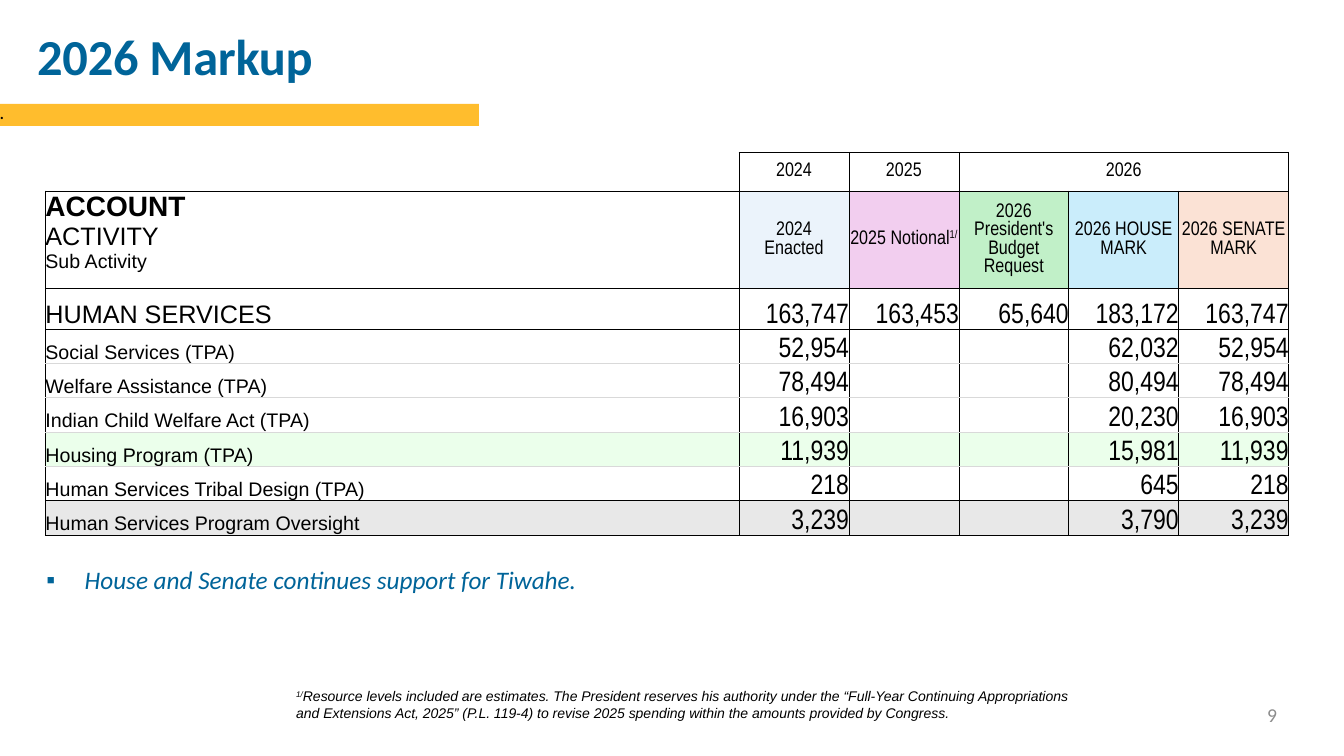
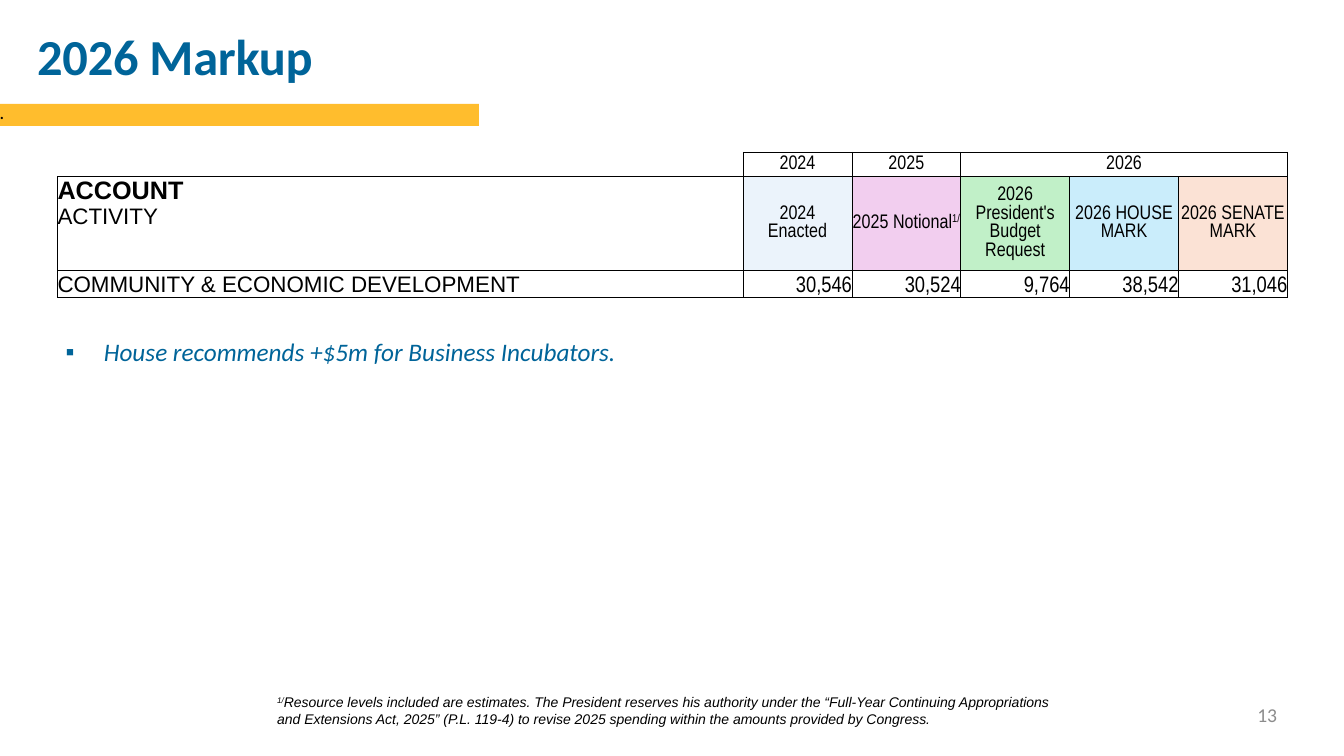
from lxml import etree
from pptx import Presentation
from pptx.dml.color import RGBColor
from pptx.enum.shapes import MSO_SHAPE
from pptx.enum.text import MSO_ANCHOR, MSO_AUTO_SIZE, PP_ALIGN
from pptx.oxml.ns import qn
from pptx.util import Inches, Pt

LEFT, CENTER, RIGHT = PP_ALIGN.LEFT, PP_ALIGN.CENTER, PP_ALIGN.RIGHT
TOP, MIDDLE, BOTTOM = MSO_ANCHOR.TOP, MSO_ANCHOR.MIDDLE, MSO_ANCHOR.BOTTOM
NO_FIT = MSO_AUTO_SIZE.NONE
RECTANGLE = MSO_SHAPE.RECTANGLE

COLORS = {
    "title": "006499", "band": "FFBD2D", "text": "000000", "number": "8C8C8C",
    "line": "000000", "hairline": "D9D9D9",
    "enacted": "EBF3FB", "notional": "F2CEEF", "request": "C1F0C8",
    "house": "CAEDFB", "senate": "FBE2D5",
    "highlight": "EBFFEB", "oversight": "E8E8E8",
}
HEAD, LABEL, NARROW = "Calibri", "Arial", "Arial Narrow"

YEARS = ["2024", "2025", "2026"]
MARKS = [
    ([("2024\nEnacted", {})], "enacted"),
    ([("2025 Notional", {}), ("1/", {"sup": True})], "notional"),
    ([("2026\nPresident's\nBudget\nRequest", {})], "request"),
    ([("2026 HOUSE MARK", {})], "house"),
    ([("2026 SENATE MARK", {})], "senate"),
]
FOOTNOTE = (
    "Resource levels included are estimates. The President reserves his authority "
    "under the “Full-Year Continuing Appropriations and Extensions Act, 2025” "
    "(P.L. 119-4) to revise 2025 spending within the amounts provided by Congress."
)


class Deck:
    """Shared style and the current slide; lengths are percent of the slide."""

    def __init__(self):
        self.prs = Presentation()
        self.prs.slide_width, self.prs.slide_height = Inches(13.33), Inches(7.5)
        self.s = None

    def x(self, share):
        return int(self.prs.slide_width * share / 100)

    def y(self, share):
        return int(self.prs.slide_height * share / 100)

    def box(self, left, top, width, height):
        return self.x(left), self.y(top), self.x(width), self.y(height)

    def place(self, sp, *box):
        sp.left, sp.top, sp.width, sp.height = self.box(*box)

    # Text
    def frame(self, tf, inset=0.0, anchor=TOP):
        tf.word_wrap, tf.auto_size, tf.vertical_anchor = True, NO_FIT, anchor
        tf.margin_left = tf.margin_right = Inches(inset)
        tf.margin_top = tf.margin_bottom = Inches(inset / 2)
        return tf.paragraphs[0]

    def run(self, p, text, font, size, color="text", bold=False, italic=False,
            sup=False, tracking=0):
        for i, line in enumerate(text.split("\n")):
            if i:
                p.add_line_break()
            if not line:
                continue
            r = p.add_run()
            r.text = line
            f = r.font
            f.name, f.size, f.bold, f.italic = font, Pt(size), bold, italic
            f.color.rgb = RGBColor.from_string(COLORS[color])
            if sup:
                r._r.get_or_add_rPr().set("baseline", "30000")
            if tracking:
                r._r.get_or_add_rPr().set("spc", str(tracking))

    def text(self, box, runs, align=LEFT, inset=0.0):
        p = self.frame(self.s.shapes.add_textbox(*self.box(*box)).text_frame, inset)
        p.alignment = align
        for text, style in runs:
            self.run(p, text, **style)

    # Slide with title, band and number
    def slide(self, title, number):
        self.s = self.prs.slides.add_slide(self.prs.slide_layouts[1])
        band = self.s.shapes.add_shape(RECTANGLE, *self.box(0, 13.73, 35.63, 2.93))
        band.shadow.inherit = False
        band.fill.solid()
        band.fill.fore_color.rgb = RGBColor.from_string(COLORS["band"])
        band.line.fill.background()
        p = self.frame(band.text_frame)
        p.alignment = LEFT
        self.run(p, ".", HEAD, 11, bold=True)

        sp = self.s.shapes.title
        self.place(sp, 2.77, 3.35, 67.44, 8.27)
        p = self.frame(sp.text_frame)
        p.alignment = LEFT
        self.run(p, title, HEAD, 36, "title", bold=True, tracking=-20)
        self.text((72, 92.93, 23.03, 3.2),
                  [(number, dict(font=HEAD, size=14, color="number"))], RIGHT)

    def bullet(self, left, top, text):
        sp = self.s.placeholders[1]
        self.place(sp, left, top, 91.75, 5.33)
        p = self.frame(sp.text_frame, 0.1)
        pPr = p._p.get_or_add_pPr()
        pPr.set("marL", str(Inches(0.38)))
        pPr.set("indent", str(-Inches(0.38)))
        etree.SubElement(pPr, qn("a:buChar")).set("char", "▪")
        p.space_before, p.space_after = Pt(0), Pt(6)
        self.run(p, text, HEAD, 18, "title", italic=True)

    def footnote(self, left, top):
        style = dict(font=LABEL, size=10, italic=True)
        self.text((left, top, 59.34, 5.87),
                  [("1/", dict(style, sup=True)), (FOOTNOTE, style)], inset=0.1)

    # Table
    def borders(self, cell, **edges):
        tcPr = cell._tc.get_or_add_tcPr()
        for i, edge in enumerate("LRTB"):
            color = edges.get(edge, "line")
            ln = etree.Element(qn("a:ln" + edge), w=str(Pt(0.5)))
            if color:
                fill = etree.SubElement(ln, qn("a:solidFill"))
                etree.SubElement(fill, qn("a:srgbClr")).set("val", COLORS[color])
            else:
                etree.SubElement(ln, qn("a:noFill"))
            tcPr.insert(i, ln)

    def cell(self, cell, runs, font, size, align=LEFT, anchor=BOTTOM,
             fill=None, **edges):
        cell.margin_left = cell.margin_right = cell.margin_top = cell.margin_bottom = 0
        cell.vertical_anchor = anchor
        if fill:
            cell.fill.solid()
            cell.fill.fore_color.rgb = RGBColor.from_string(COLORS[fill])
        else:
            cell.fill.background()
        self.borders(cell, **edges)
        p = cell.text_frame.paragraphs[0]
        p.alignment = align
        for text, style in runs:
            self.run(p, text, **{"font": font, "size": size, **style})
        if not any(text for text, _ in runs):
            etree.SubElement(p._p, qn("a:endParaRPr")).set("sz", str(size * 100))

    def budget(self, left, label_width, mark_width, heights, key, rows, number_size):
        """rows: (label, label size, values, fill, edge colours)."""
        widths = [label_width] + [mark_width] * len(MARKS)
        gf = self.s.shapes.add_table(len(heights), len(widths), *self.box(
            left, 20.13, sum(widths), sum(heights)))
        t = gf.table
        t.first_row = t.horz_banding = False
        for col, width in zip(t.columns, widths):
            col.width = self.x(width)
        for row, height in zip(t.rows, heights):
            row.height = self.y(height)

        # Year and mark headings
        self.cell(t.cell(0, 0), [], NARROW, 14, L=None, T=None)
        for c in range(1, len(widths)):
            year = YEARS[c - 1] if c <= len(YEARS) else ""
            self.cell(t.cell(0, c), [(year, {})], NARROW, 14, CENTER, MIDDLE)
        t.cell(0, len(YEARS)).merge(t.cell(0, len(MARKS)))
        self.cell(t.cell(1, 0), key, LABEL, 14, anchor=TOP)
        for c, (runs, fill) in enumerate(MARKS, 1):
            self.cell(t.cell(1, c), runs, NARROW, 14, CENTER, MIDDLE, fill)

        # Amounts
        for n, (label, size, values, fill, edges) in enumerate(rows, 2):
            self.cell(t.cell(n, 0), [(label, {})], LABEL, size, fill=fill, **edges)
            for c, value in enumerate(values, 1):
                self.cell(t.cell(n, c), [(value, {})], NARROW, number_size, RIGHT,
                          fill=fill, **edges)


def main():
    deck = Deck()

    # Human services
    above, below = {"T": "hairline"}, {"B": "hairline"}
    both = {**above, **below}
    programs = [
        ("Social Services (TPA)", "52,954", "62,032", None, below),
        ("Welfare Assistance (TPA)", "78,494", "80,494", None, both),
        ("Indian Child Welfare Act (TPA)", "16,903", "20,230", None, both),
        ("Housing Program (TPA)", "11,939", "15,981", "highlight", both),
        ("Human Services Tribal Design (TPA)", "218", "645", None, above),
        ("Human Services Program Oversight", "3,239", "3,790", "oversight", {}),
    ]
    rows = [("HUMAN SERVICES", 18,
             ["163,747", "163,453", "65,640", "183,172", "163,747"], None, {})]
    # The Senate mark of each program equals its enacted level
    rows += [(label, 14, [enacted, "", "", house, enacted], fill, edges)
             for label, enacted, house, fill, edges in programs]
    deck.slide("2026 Markup", "9")
    deck.footnote(21.3, 90.27)
    deck.budget(3.38, 51.61, 8.18, [5.13, 12.93, 5.33] + [4.5] * len(programs),
                [("ACCOUNT\n", dict(size=20, bold=True)),
                 ("ACTIVITY\n", dict(size=18)), ("Sub Activity", {})], rows, 20)
    deck.bullet(2.7, 74, "House and Senate continues support for Tiwahe.")

    # Community and economic development
    deck.slide("2026 Markup", "13")
    deck.footnote(19.88, 91.07)
    deck.budget(4.28, 51.01, 8.1, [3.2, 12.4, 3.6],
                [("ACCOUNT\n", dict(size=18, bold=True)), ("ACTIVITY", dict(size=16))],
                [("COMMUNITY & ECONOMIC DEVELOPMENT", 16,
                  ["30,546", "30,524", "9,764", "38,542", "31,046"], None, {})], 16)
    deck.bullet(4.13, 43.87, "House recommends +$5m for Business Incubators.")

    deck.prs.save("out.pptx")


if __name__ == "__main__":
    main()
